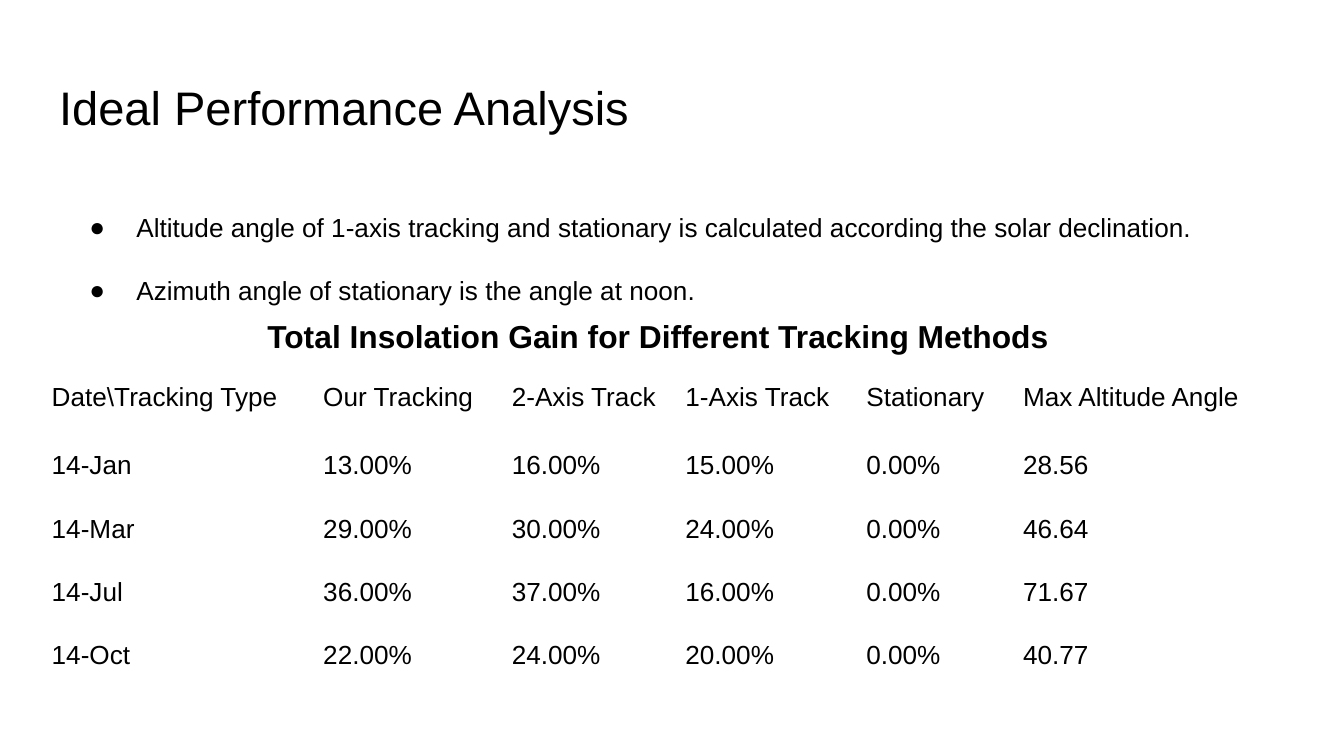
from lxml.etree import SubElement
from pptx import Presentation
from pptx.dml.color import RGBColor
from pptx.enum.text import MSO_ANCHOR, PP_ALIGN
from pptx.oxml.ns import qn
from pptx.util import Pt

FONT = "Arial"
BLACK = "000000"
INSET = Pt(7.2)

TITLE = "Ideal Performance Analysis"
NOTES = [
    "Altitude angle of 1-axis tracking and stationary is calculated according the solar declination.",
    "Azimuth angle of stationary is the angle at noon.",
]
TABLE_TITLE = "Total Insolation Gain for Different Tracking Methods"
HEADERS = ["Date\\Tracking Type", "Our Tracking", "2-Axis Track",
           "1-Axis Track", "Stationary", "Max Altitude Angle"]
GAINS = [
    ["14-Jan", "13.00%", "16.00%", "15.00%", "0.00%", "28.56"],
    ["14-Mar", "29.00%", "30.00%", "24.00%", "0.00%", "46.64"],
    ["14-Jul", "36.00%", "37.00%", "16.00%", "0.00%", "71.67"],
    ["14-Oct", "22.00%", "24.00%", "20.00%", "0.00%", "40.77"],
]
COLUMN_WIDTHS = [145.5, 101, 93, 97, 84, 144]


def color(hex_string):
    return RGBColor.from_string(hex_string)


def format_paragraph(paragraph, size, bold=False, align=PP_ALIGN.LEFT, spacing=1.0):
    paragraph.font.name = FONT
    paragraph.font.size = Pt(size)
    paragraph.font.bold = bold
    paragraph.font.color.rgb = color(BLACK)
    paragraph.alignment = align
    paragraph.line_spacing = spacing


def set_insets(target):
    """Apply the common inset to a text frame or a table cell."""
    target.margin_left = target.margin_right = INSET
    target.margin_top = target.margin_bottom = INSET


def add_bullet(paragraph):
    properties = paragraph._p.get_or_add_pPr()
    properties.set("marL", str(Pt(36)))
    properties.set("indent", str(-Pt(25.2)))
    bullet_color = SubElement(properties, qn("a:buClr"))
    SubElement(bullet_color, qn("a:srgbClr"), val=BLACK)
    SubElement(properties, qn("a:buFont"), typeface=FONT)
    SubElement(properties, qn("a:buChar"), char="●")


def place_title(slide, left, top, width, height):
    title = slide.shapes.title
    title.left, title.top = Pt(left), Pt(top)
    title.width, title.height = Pt(width), Pt(height)
    frame = title.text_frame
    frame.text = TITLE
    frame.vertical_anchor = MSO_ANCHOR.TOP
    set_insets(frame)
    format_paragraph(frame.paragraphs[0], 25.2)


def add_notes(slide, left, top, width, height):
    box = slide.shapes.add_textbox(Pt(left), Pt(top), Pt(width), Pt(height))
    frame = box.text_frame
    frame.word_wrap = True
    set_insets(frame)
    frame.text = "\n".join(NOTES)
    for paragraph in frame.paragraphs:
        format_paragraph(paragraph, 14, spacing=2.0)
        add_bullet(paragraph)


def add_gain_table(slide, left, top, row_height):
    rows = [[TABLE_TITLE] + [""] * (len(HEADERS) - 1), HEADERS, *GAINS]
    table = slide.shapes.add_table(
        len(rows), len(HEADERS), Pt(left), Pt(top),
        Pt(sum(COLUMN_WIDTHS)), Pt(row_height * len(rows))).table
    table.first_row = table.horz_banding = False
    for column, width in zip(table.columns, COLUMN_WIDTHS):
        column.width = Pt(width)
    for row_index, texts in enumerate(rows):
        for column_index, text in enumerate(texts):
            cell = table.cell(row_index, column_index)
            cell.fill.background()
            set_insets(cell)
            cell.text = text
            paragraph = cell.text_frame.paragraphs[0]
            if row_index == 0:
                format_paragraph(paragraph, 17, bold=True, align=PP_ALIGN.CENTER)
            else:
                format_paragraph(paragraph, 14, spacing=1.0 if row_index == 1 else 1.15)
    table.cell(0, 0).merge(table.cell(0, len(HEADERS) - 1))


def main():
    presentation = Presentation()
    presentation.slide_width, presentation.slide_height = Pt(720), Pt(405)
    slide = presentation.slides.add_slide(presentation.slide_layouts[5])
    place_title(slide, 24.5, 35, 671, 45)
    add_gain_table(slide, 20.5, 164, 34)
    add_notes(slide, 30, 89.5, 665, 65.5)
    presentation.save("out.pptx")


if __name__ == "__main__":
    main()
